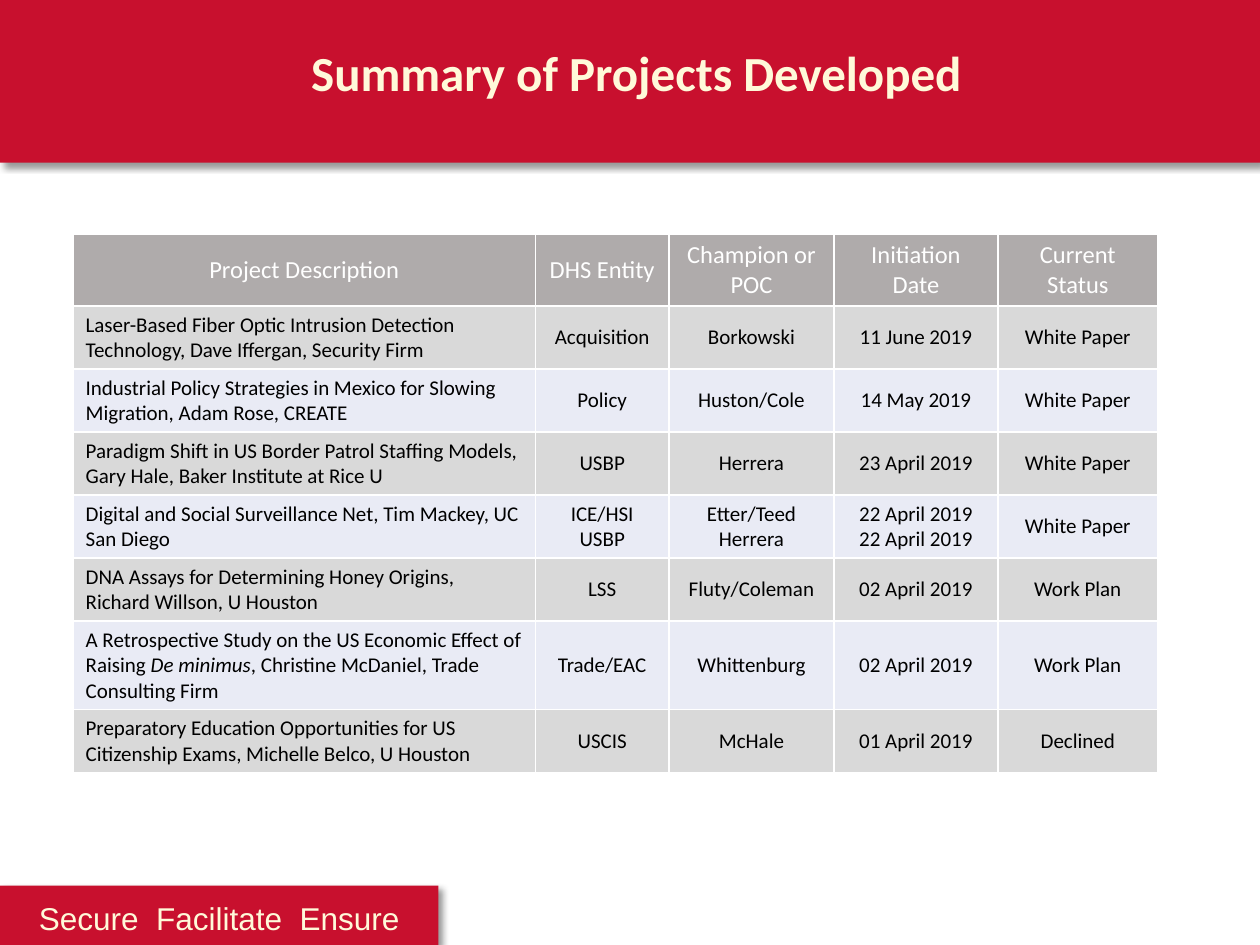
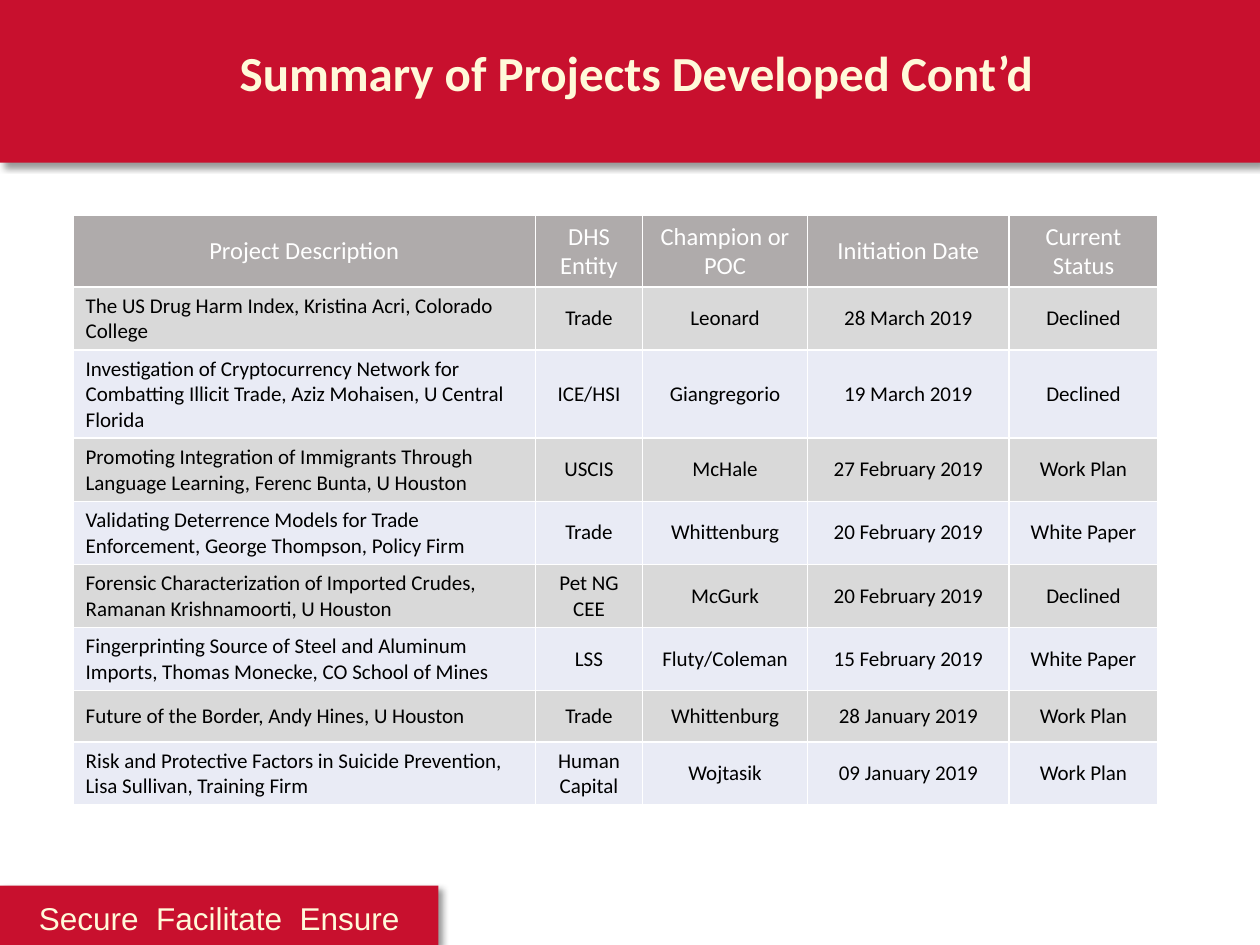
"""Build two slides that summarise the projects developed."""
from lxml import etree
from pptx import Presentation
from pptx.dml.color import RGBColor
from pptx.enum import shapes, text
from pptx.oxml import ns
from pptx.util import Inches, Pt

RED, CREAM, WHITE, BLACK = "C8102E", "FFF9D9", "FFFFFF", "000000"
HEADER_GREY, ROW_FILLS = "AFABAB", ("D9D9D9", "E9EBF5")
BANDS = [(0, 0, 10, 1.29), (0, 7.03, 3.48, 0.47)]
TABLE_LEFT, ROW_HEIGHT = 0.58, 0.41
HEADINGS = ("Project Description", "DHS Entity", "Champion or POC",
            "Initiation Date", "Current Status")

SLIDES = [
    ("Summary of Projects Developed", 1.86, (3.67, 1.06, 1.31, 1.3, 1.27), [
        ("Laser-Based Fiber Optic Intrusion Detection Technology, Dave Iffergan, Security Firm",
         "Acquisition", "Borkowski", "11 June 2019", "White Paper"),
        ("Industrial Policy Strategies in Mexico for Slowing Migration, Adam Rose, CREATE",
         "Policy", "Huston/Cole", "14 May 2019", "White Paper"),
        ("Paradigm Shift in US Border Patrol Staffing Models, Gary Hale, Baker Institute at Rice U",
         "USBP", "Herrera", "23 April 2019", "White Paper"),
        ("Digital and Social Surveillance Net, Tim Mackey, UC San Diego",
         "ICE/HSI\nUSBP", "Etter/Teed\nHerrera", "22 April 2019\n22 April 2019", "White Paper"),
        ("DNA Assays for Determining Honey Origins, Richard Willson, U Houston",
         "LSS", "Fluty/Coleman", "02 April 2019", "Work Plan"),
        ("A Retrospective Study on the US Economic Effect of Raising *De minimus*, "
         "Christine McDaniel, Trade Consulting Firm",
         "Trade/EAC", "Whittenburg", "02 April 2019", "Work Plan"),
        ("Preparatory Education Opportunities for US Citizenship Exams, Michelle Belco, U Houston",
         "USCIS", "McHale", "01 April 2019", "Declined"),
    ]),
    ("Summary of Projects Developed Cont’d", 1.71, (3.67, 0.85, 1.31, 1.6, 1.18), [
        ("The US Drug Harm Index, Kristina Acri, Colorado College",
         "Trade", "Leonard", "28 March 2019", "Declined"),
        ("Investigation of Cryptocurrency Network for Combatting Illicit Trade, "
         "Aziz Mohaisen, U Central Florida",
         "ICE/HSI", "Giangregorio", "19 March 2019", "Declined"),
        ("Promoting Integration of Immigrants Through Language Learning, Ferenc Bunta, U Houston",
         "USCIS", "McHale", "27 February 2019", "Work Plan"),
        ("Validating Deterrence Models for Trade Enforcement, George Thompson, Policy Firm",
         "Trade", "Whittenburg", "20 February 2019", "White Paper"),
        ("Forensic Characterization of Imported Crudes, Ramanan Krishnamoorti, U Houston",
         "Pet NG CEE", "McGurk", "20 February 2019", "Declined"),
        ("Fingerprinting Source of Steel and Aluminum Imports, Thomas Monecke, CO School of Mines",
         "LSS", "Fluty/Coleman", "15 February 2019", "White Paper"),
        ("Future of the Border, Andy Hines, U Houston",
         "Trade", "Whittenburg", "28 January 2019", "Work Plan"),
        ("Risk and Protective Factors in Suicide Prevention, Lisa Sullivan, Training Firm",
         "Human Capital", "Wojtasik", "09 January 2019", "Work Plan"),
    ]),
]


def color(value):
    """Turn a hex string into a colour."""
    return RGBColor.from_string(value)


def write(frame, words, size, fill, font="Calibri", bold=False, centered=True):
    """Write one paragraph per line, with words between asterisks in italics."""
    frame.word_wrap = True
    for index, line in enumerate(words.split("\n")):
        para = frame.add_paragraph() if index else frame.paragraphs[0]
        para.alignment = text.PP_ALIGN.CENTER if centered else text.PP_ALIGN.LEFT
        for part, piece in enumerate(line.split("*")):
            span = para.add_run()
            span.text = piece
            span.font.name, span.font.size = font, Pt(size)
            span.font.bold, span.font.italic = bold, part % 2 == 1
            span.font.color.rgb = color(fill)


deck = Presentation()
deck.slide_width, deck.slide_height = Inches(10), Inches(7.5)

for title, table_top, widths, projects in SLIDES:
    page = deck.slides.add_slide(deck.slide_layouts[6])

    for place in BANDS:
        band = page.shapes.add_shape(shapes.MSO_SHAPE.RECTANGLE, *map(Inches, place))
        band.fill.solid()
        band.fill.fore_color.rgb = color(RED)
        band.line.fill.background()
        band.shadow.inherit = False
        effects = band._element.spPr.find(ns.qn("a:effectLst"))
        shadow = etree.SubElement(effects, ns.qn("a:outerShdw"), blurRad=str(Pt(4)),
                                  dist=str(Pt(3)), dir="2700000", algn="tl", rotWithShape="0")
        tint = etree.SubElement(shadow, ns.qn("a:srgbClr"), val=BLACK)
        etree.SubElement(tint, ns.qn("a:alpha"), val="40000")

    motto = page.shapes.add_textbox(*map(Inches, BANDS[1])).text_frame
    write(motto, "Secure  Facilitate  Ensure", 18, CREAM, font="Arial")
    motto.paragraphs[0].line_spacing = 1.19

    heading = page.shapes.add_textbox(Inches(1.05), Inches(0.29), Inches(8), Inches(0.57))
    write(heading.text_frame, title, 28, CREAM, bold=True)

    rows = [HEADINGS] + projects
    table = page.shapes.add_table(
        len(rows), len(HEADINGS), Inches(TABLE_LEFT), Inches(table_top),
        Inches(sum(widths)), Inches(ROW_HEIGHT * len(rows))).table
    for column, width in zip(table.columns, widths):
        column.width = Inches(width)
    for row_index, row in enumerate(rows):
        is_header = row_index == 0
        table.rows[row_index].height = Inches(ROW_HEIGHT)
        for column_index, words in enumerate(row):
            cell = table.cell(row_index, column_index)
            cell.vertical_anchor = text.MSO_ANCHOR.MIDDLE
            cell.fill.solid()
            cell.fill.fore_color.rgb = color(HEADER_GREY if is_header else ROW_FILLS[(row_index - 1) % 2])
            write(cell.text_frame, words, 14 if is_header else 12,
                  WHITE if is_header else BLACK, centered=is_header or column_index > 0)

deck.save("out.pptx")
